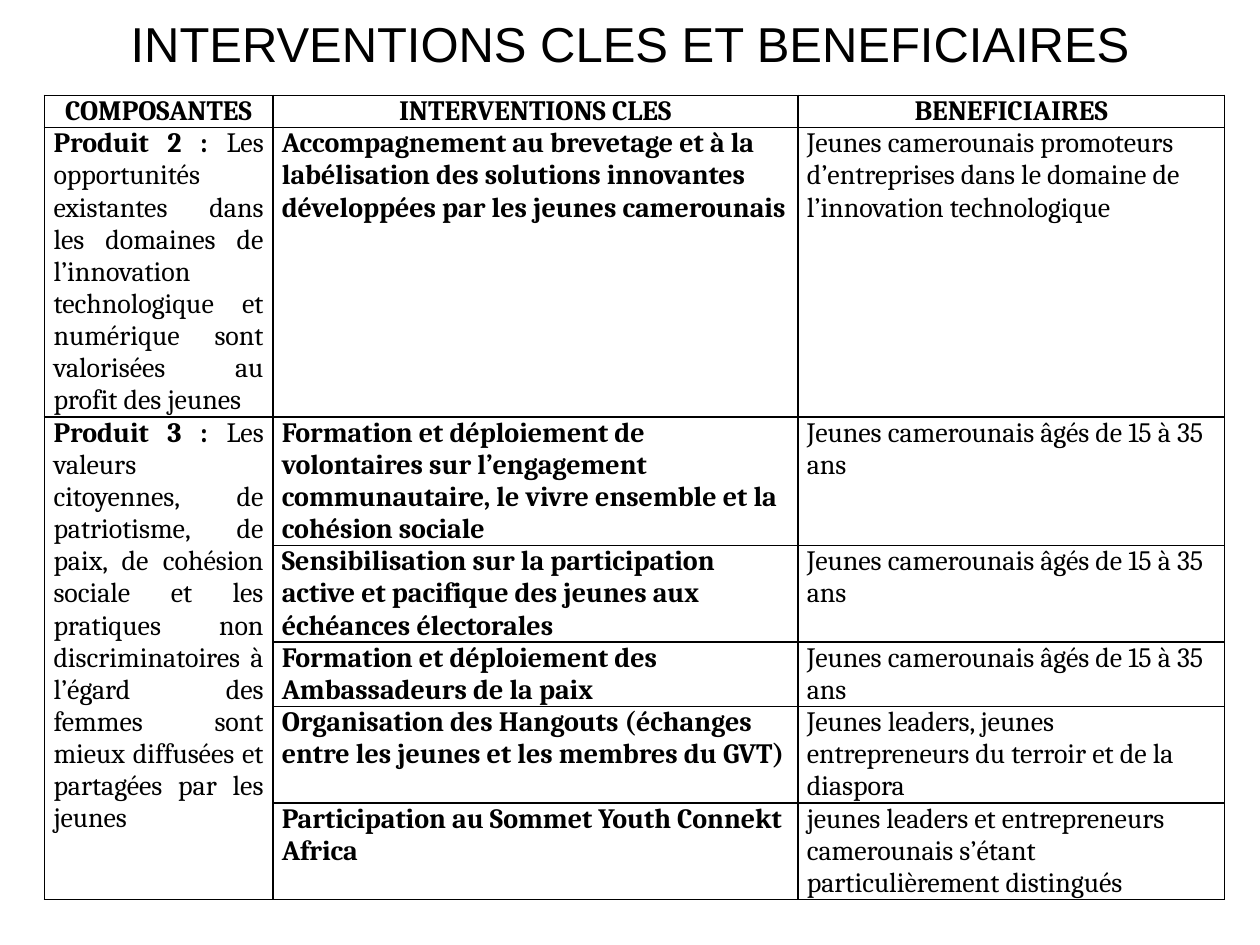
from lxml.etree import SubElement
from pptx import Presentation
from pptx.dml.color import RGBColor
from pptx.enum.text import MSO_ANCHOR as Anchor, PP_ALIGN as Align
from pptx.oxml.ns import qn
from pptx.util import Pt

COLORS = {"ink": "000000", "paper": "FFFFFF"}
LINE = 18.36  # height of one line of table text
COLUMNS = [130.5, 300, 244]
HEADINGS = ["COMPOSANTES", "INTERVENTIONS CLES", "BENEFICIAIRES"]
YOUTH = "Jeunes camerounais âgés de 15 à 35 ans"

# Each component: label, description, then (intervention, beneficiaries, lines)
COMPONENTS = [
    ("Produit 2 : ",
     "Les opportunités existantes dans les domaines de l’innovation "
     "technologique et numérique sont valorisées au profit des jeunes",
     [("Accompagnement au brevetage et à la labélisation des solutions "
       "innovantes développées par les jeunes camerounais",
       "Jeunes camerounais promoteurs d’entreprises dans le domaine de "
       "l’innovation technologique", 9)]),
    ("Produit 3 : ",
     "Les valeurs citoyennes, de patriotisme, de paix, de cohésion "
     "sociale et les pratiques non discriminatoires à l’égard des femmes "
     "sont mieux diffusées et partagées par les jeunes",
     [("Formation et déploiement de volontaires sur l’engagement "
       "communautaire, le vivre ensemble et la cohésion sociale", YOUTH, 4),
      ("Sensibilisation sur la participation active et pacifique des jeunes "
       "aux échéances électorales", YOUTH, 3),
      ("Formation et déploiement des Ambassadeurs de la paix", YOUTH, 2),
      ("Organisation des Hangouts (échanges entre les jeunes et les membres "
       "du GVT)",
       "Jeunes leaders, jeunes entrepreneurs du terroir et de la diaspora", 3),
      ("Participation au Sommet Youth Connekt Africa",
       "jeunes leaders et entrepreneurs camerounais s’étant "
       "particulièrement distingués", 3)]),
]


def add_text(para, text, size=16, font="Cambria", bold=False,
             align=Align.LEFT, color="ink"):
    para.alignment = align
    span = para.add_run()
    span.text = text
    span.font.size = Pt(size)
    span.font.name = font
    span.font.bold = bold
    span.font.color.rgb = RGBColor.from_string(COLORS[color])


def format_cell(cell):
    cell.margin_left = cell.margin_right = Pt(5.2)
    cell.margin_top = cell.margin_bottom = 0
    cell.vertical_anchor = Anchor.TOP
    # Borders come before the fill in the cell properties
    props = cell._tc.get_or_add_tcPr()
    for side in ("a:lnL", "a:lnR", "a:lnT", "a:lnB"):
        border = SubElement(props, qn(side), w=str(Pt(1)))
        fill = SubElement(border, qn("a:solidFill"))
        SubElement(fill, qn("a:srgbClr"), val=COLORS["ink"])
    cell.fill.solid()
    cell.fill.fore_color.rgb = RGBColor.from_string(COLORS["paper"])


def place_title(page, left, top, width, height):
    title = page.shapes.title
    title.left, title.top = Pt(left), Pt(top)
    title.width, title.height = Pt(width), Pt(height)
    frame = title.text_frame
    frame.word_wrap = True
    frame.vertical_anchor = Anchor.MIDDLE
    add_text(frame.paragraphs[0], "INTERVENTIONS CLES ET BENEFICIAIRES",
             size=28, font="Arial", align=Align.CENTER)


def place_table(page, left, top, width):
    lines = [1] + [item[2] for part in COMPONENTS for item in part[2]]
    table = page.shapes.add_table(
        len(lines), len(COLUMNS), Pt(left), Pt(top), Pt(width),
        Pt(LINE * sum(lines))).table
    table.first_row = table.horz_banding = False
    for column, share in zip(table.columns, COLUMNS):
        column.width = Pt(width * share / sum(COLUMNS))
    for row, count in zip(table.rows, lines):
        row.height = Pt(LINE * count)
    for cell in table.iter_cells():
        format_cell(cell)

    # Heading row
    for index, heading in enumerate(HEADINGS):
        add_text(table.cell(0, index).text_frame.paragraphs[0], heading,
                 bold=True, align=Align.CENTER)

    # One merged component cell beside its interventions
    first = 1
    for label, description, items in COMPONENTS:
        component = table.cell(first, 0)
        if len(items) > 1:
            component.merge(table.cell(first + len(items) - 1, 0))
        para = component.text_frame.paragraphs[0]
        para.space_after = Pt(2.6)
        add_text(para, label, bold=True, align=Align.JUSTIFY)
        add_text(para, description, align=Align.JUSTIFY)
        for row, (action, people, _) in enumerate(items, first):
            add_text(table.cell(row, 1).text_frame.paragraphs[0], action,
                     bold=True)
            add_text(table.cell(row, 2).text_frame.paragraphs[0], people)
        first += len(items)


def main():
    deck = Presentation()
    deck.slide_width, deck.slide_height = Pt(720), Pt(540)
    page = deck.slides.add_slide(deck.slide_layouts[5])
    place_title(page, 36, 0, 648, 49)
    place_table(page, 25.4, 54.5, 674.5)
    deck.save("out.pptx")


if __name__ == "__main__":
    main()
